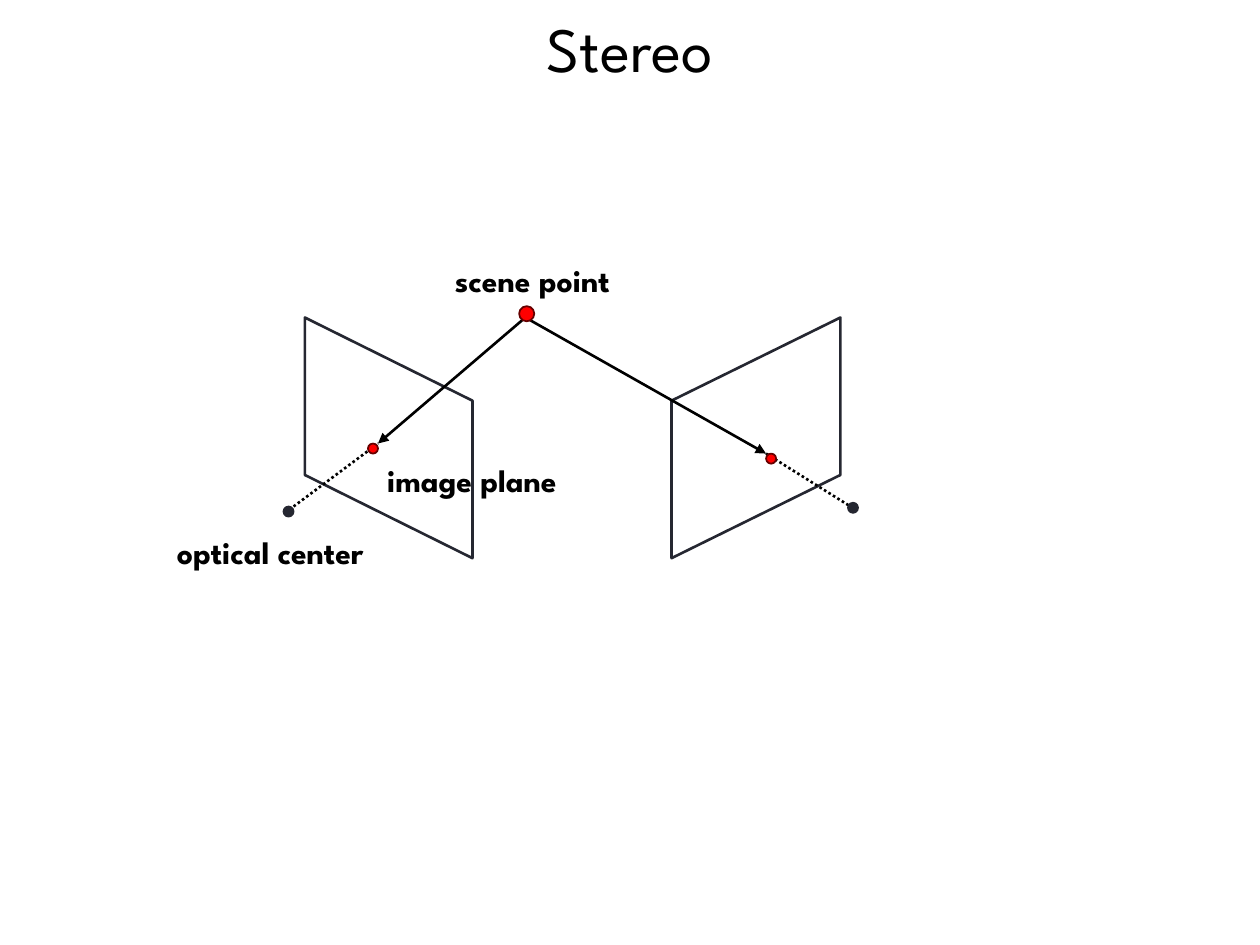
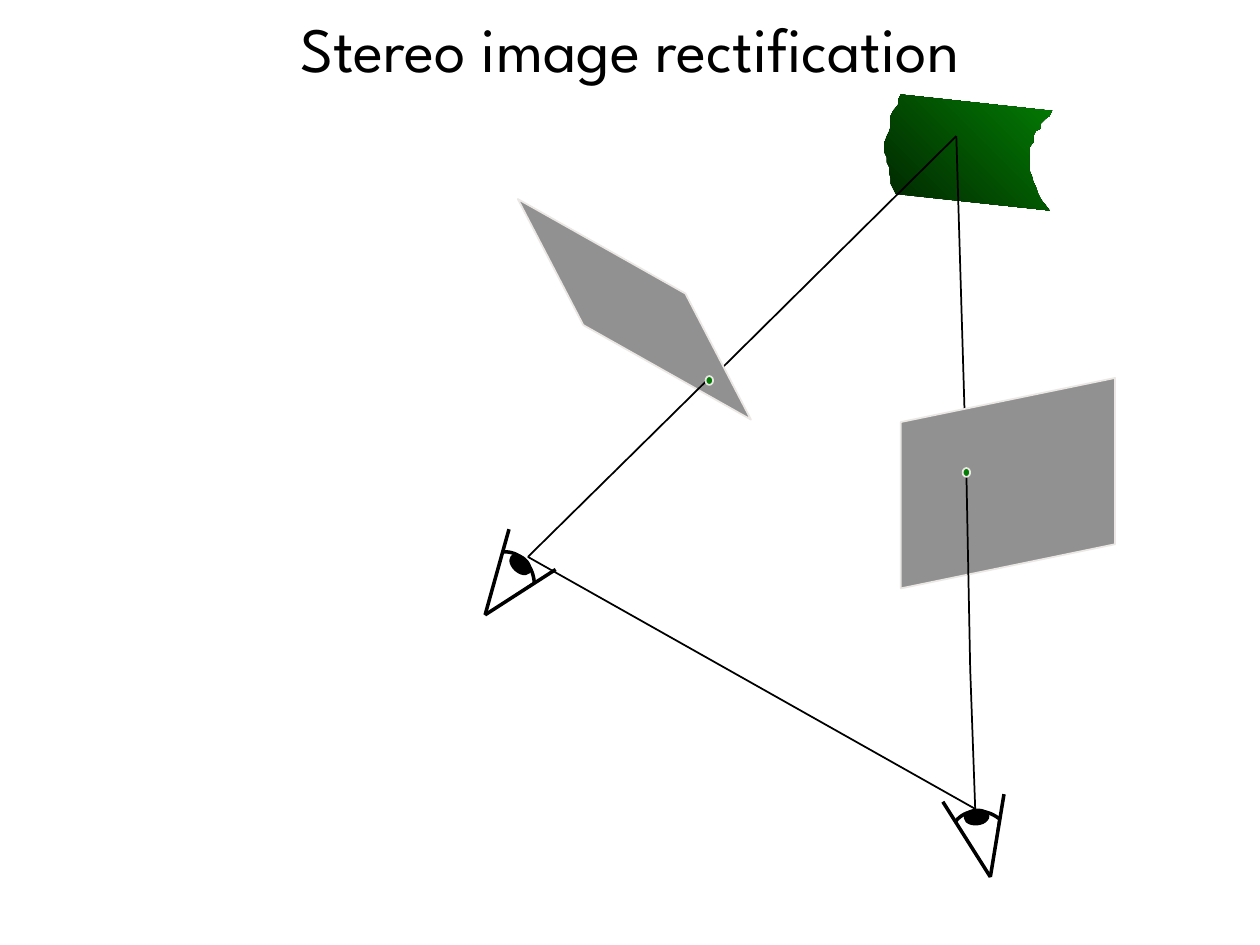
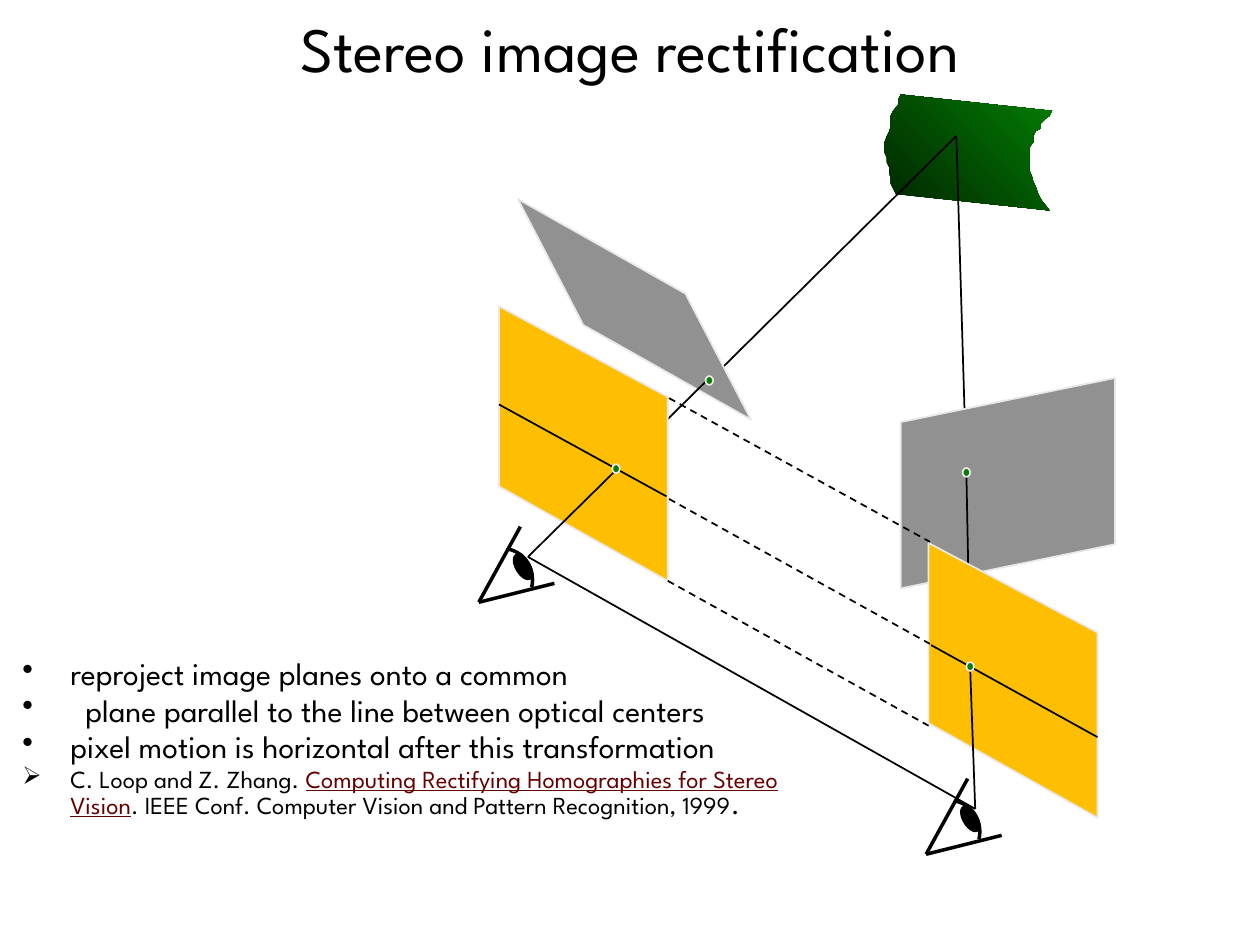
from math import cos, radians, sin

from pptx import Presentation
from pptx.dml.color import RGBColor
from pptx.enum.dml import MSO_LINE
from pptx.enum.shapes import MSO_CONNECTOR, MSO_SHAPE
from pptx.enum.text import MSO_ANCHOR, PP_ALIGN
from pptx.oxml.ns import qn
from pptx.util import Inches, Pt

FONT = "League Spartan"
BLACK, INK, RED, MAROON = "000000", "252731", "FF0000", "660000"
GREY, EDGE, GREEN, DARK_GREEN, YELLOW = "919191", "EAE7E4", "037C03", "012501", "FEBF02"
STRAIGHT, OVAL = MSO_CONNECTOR.STRAIGHT, MSO_SHAPE.OVAL
DOTTED, DASHED = MSO_LINE.ROUND_DOT, MSO_LINE.DASH
CENTER, MIDDLE = PP_ALIGN.CENTER, MSO_ANCHOR.MIDDLE

# Stereo pair: image planes, optical centers and projections
SCENE_POINT = (4.18, 2.49)
VIEWS = [
    {"outer": 2.42, "inner": 3.75, "center": (2.29, 4.06), "image": (2.96, 3.56),
     "ray": ((4.17, 2.52), (3, 3.52)), "behind": ((2.33, 4.02), (3, 3.52))},
    {"outer": 6.67, "inner": 5.33, "center": (6.77, 4.03), "image": (6.12, 3.64),
     "ray": ((4.17, 2.52), (6.08, 3.6)), "behind": ((6.08, 3.6), (6.75, 4.02))},
]
LABELS = [
    ("scene point", 3.43, 2.02, 1.59),
    ("optical center", 1.23, 4.18, 1.83),
    ("image plane", 2.92, 3.61, 1.65),
]

# Rectification: scene surface, planes, sight lines and eyes
SURFACE = [
    (7.15, 0.75), (7.13, 0.79), (7.13, 0.83), (7.09, 0.88), (7.07, 0.92), (7.07, 1),
    (7.06, 1.04), (7.04, 1.08), (7.02, 1.13), (7.02, 1.21), (7.04, 1.25), (7.04, 1.29),
    (7.06, 1.33), (7.06, 1.38), (7.07, 1.42), (7.07, 1.46), (7.09, 1.5), (7.11, 1.54),
    (8.33, 1.67), (8.26, 1.58), (8.24, 1.54), (8.22, 1.48), (8.2, 1.44), (8.19, 1.4),
    (8.17, 1.35), (8.17, 1.17), (8.2, 1.13), (8.2, 1.08), (8.22, 1.04), (8.26, 1.02),
    (8.26, 0.98), (8.3, 0.94), (8.33, 0.92), (8.35, 0.88),
]
LEFT_PLANE = [(4.63, 2.58), (5.96, 3.33), (5.44, 2.33), (4.11, 1.58)]
RIGHT_PLANE = [(7.15, 3.35), (7.15, 4.67), (8.85, 4.32), (8.85, 3)]
LEFT_RECTIFIED = [(3.96, 3.86), (5.3, 4.61), (5.3, 3.15), (3.96, 2.43)]
RIGHT_RECTIFIED = [(7.37, 5.74), (8.71, 6.49), (8.71, 5.02), (7.37, 4.31)]
OBJECT, LEFT_EYE, RIGHT_EYE = (7.59, 1.08), (4.19, 4.42), (7.74, 6.42)
LEFT_STOP, RIGHT_STOP, RIGHT_LOW = (4.89, 3.73), (7.67, 3.75), (7.7, 5.31)
IMAGE_DOTS = [(7.67, 3.75), (5.63, 3.02)]
RECTIFIED_DOTS = [(7.7, 5.29), (4.89, 3.72)]
DASHES = [((5.31, 3.16), (7.38, 4.3)), ((5.3, 4.61), (7.37, 5.76)), ((5.31, 3.96), (7.38, 5.11))]
SCANLINES = [((3.96, 3.21), (5.29, 3.94)), ((7.39, 5.12), (8.71, 5.85))]

# Eye parts are measured from the apex; arc holds four Bezier points
TILTED_EYE = {
    "tips": [(0.19, -0.68), (0.56, -0.36)],
    "arc": [(0.14, -0.5), (0.27, -0.51), (0.38, -0.4), (0.39, -0.26)],
    "pupil": (0.28, -0.4), "size": (0.12, 0.19), "rotation": 312.5, "cone": True,
}
PARALLEL_EYE = {
    "tips": [(0.33, -0.6), (0.6, -0.15)],
    "arc": [(0.24, -0.42), (0.37, -0.39), (0.45, -0.26), (0.42, -0.12)],
    "pupil": (0.35, -0.28), "size": (0.11, 0.22), "rotation": 329, "cone": False,
}

# Bullet, hanging indent, space before, runs
BODY = [
    ("•", 0.38, 0, [("reproject image planes onto a common", {"size": 18})]),
    ("•", 0.5, 3.6, [("plane parallel to the line between optical centers", {"size": 18})]),
    ("•", 0.38, 3.6, [("pixel motion is horizontal after this transformation", {"size": 18})]),
    ("➢", 0.38, 2.8, [
        ("C. Loop and Z. Zhang. ", {"size": 14}),
        ("Computing Rectifying Homographies for Stereo Vision",
         {"size": 14, "color": MAROON, "underline": True}),
        (". IEEE Conf. Computer Vision and Pattern Recognition, 1999", {"size": 14}),
        (".", {"size": 16}),
    ]),
]


def rgb(value):
    return RGBColor.from_string(value)


def add_run(p, text, size, color=BLACK, **style):
    r = p.add_run()
    r.text = text
    r.font.color.rgb = rgb(color)
    for name, value in {"name": FONT, "size": Pt(size), **style}.items():
        setattr(r.font, name, value)


def add_slide(title):
    s = prs.slides.add_slide(prs.slide_layouts[5])
    sp = s.shapes.title
    sp.left, sp.top, sp.width, sp.height = 0, 0, Inches(10), Inches(0.75)
    tf = sp.text_frame
    tf.vertical_anchor = MIDDLE
    p = tf.paragraphs[0]
    p.alignment = CENTER
    add_run(p, title, 36)
    return s


def paint(sp, fill, line, width):
    sp.shadow.inherit = False
    if fill:
        sp.fill.solid()
        sp.fill.fore_color.rgb = rgb(fill)
    else:
        sp.fill.background()
    if line:
        sp.line.color.rgb = rgb(line)
        sp.line.width = Pt(width)
    else:
        sp.line.fill.background()


def add_outline(s, points, fill=None, line=EDGE, width=1, close=True):
    start, *rest = [(Inches(x), Inches(y)) for x, y in points]
    builder = s.shapes.build_freeform(*start)
    builder.add_line_segments(rest, close=close)
    sp = builder.convert_to_shape()
    paint(sp, fill, line, width)
    return sp


def add_dot(s, center, size, fill, line, rotation=0):
    (x, y), (w, h) = center, size
    sp = s.shapes.add_shape(OVAL, Inches(x - w / 2), Inches(y - h / 2), Inches(w), Inches(h))
    sp.rotation = rotation
    paint(sp, fill, line, 1)


def add_line(s, start, end, width=1, dash=None, arrow=False):
    c = s.shapes.add_connector(STRAIGHT, *(Inches(v) for v in (*start, *end)))
    c.line.color.rgb = rgb(BLACK)
    c.line.width = Pt(width)
    if dash:
        c.line.dash_style = dash
    if arrow:
        ln = c.line._get_or_add_ln()
        ln.append(ln.makeelement(qn("a:tailEnd"), {"type": "triangle"}))
    props = c._element.spPr
    props.append(props.makeelement(qn("a:effectLst"), {}))


def bezier(points, steps=16):
    for i in range(steps + 1):
        t = i / steps
        weights = ((1 - t) ** 3, 3 * t * (1 - t) ** 2, 3 * t * t * (1 - t), t ** 3)
        yield tuple(sum(w * pt[axis] for w, pt in zip(weights, points)) for axis in (0, 1))


def add_eye(s, eye, apex, turn=0):
    c, n = cos(radians(turn)), sin(radians(turn))

    def place(point):
        x, y = point
        return apex[0] + x * c - y * n, apex[1] + x * n + y * c

    arc = list(bezier([place(pt) for pt in eye["arc"]]))
    if eye["cone"]:
        add_outline(s, [apex, *arc], line=BLACK, width=0.75)
    add_outline(s, arc, line=BLACK, width=2, close=False)
    for tip in eye["tips"]:
        add_line(s, apex, place(tip), 2)
    add_dot(s, place(eye["pupil"]), eye["size"], BLACK, BLACK, eye["rotation"] + turn)


def add_green_dots(s, centers):
    for center in centers:
        add_dot(s, center, (0.06, 0.07), GREEN, EDGE)


def add_surface(s):
    sp = add_outline(s, SURFACE, line=None)
    sp.fill.gradient()
    sp.fill.gradient_angle = 45
    for stop, color in zip(sp.fill.gradient_stops, (DARK_GREEN, GREEN)):
        stop.color.rgb = rgb(color)


def add_scene(s, rectified=False):
    add_surface(s)
    add_line(s, LEFT_EYE, RIGHT_EYE)
    add_line(s, IMAGE_DOTS[1], OBJECT)
    add_outline(s, LEFT_PLANE, GREY)
    add_line(s, RIGHT_STOP, OBJECT)
    add_line(s, LEFT_STOP, (5.63, 3))
    if rectified:
        add_outline(s, LEFT_RECTIFIED, YELLOW)
    add_outline(s, RIGHT_PLANE, GREY)
    add_line(s, RIGHT_LOW, RIGHT_STOP)
    if rectified:
        add_outline(s, RIGHT_RECTIFIED, YELLOW)
    add_line(s, LEFT_EYE, LEFT_STOP)
    add_line(s, RIGHT_EYE, RIGHT_LOW)
    add_green_dots(s, IMAGE_DOTS)


def add_body(s):
    tf = s.shapes.add_textbox(Inches(0.08), Inches(5.2), Inches(6.5), Inches(2.19)).text_frame
    tf.word_wrap = True
    for i, (bullet, indent, before, runs) in enumerate(BODY):
        p = tf.add_paragraph() if i else tf.paragraphs[0]
        p.line_spacing, p.space_before = 0.8, Pt(before)
        props = p._p.get_or_add_pPr()
        props.set("marL", str(Inches(indent)))
        props.set("indent", str(-Inches(indent)))
        props.append(props.makeelement(qn("a:buChar"), {"char": bullet}))
        for text, style in runs:
            add_run(p, text, **style)


def stereo_slide():
    s = add_slide("Stereo")
    for v in VIEWS:
        outer, inner = v["outer"], v["inner"]
        add_outline(s, [(outer, 2.52), (outer, 3.77), (inner, 4.43), (inner, 3.18)],
                    line=INK, width=1.5)
    for v in VIEWS:
        add_line(s, *v["behind"], width=1.5, dash=DOTTED)
        add_line(s, *v["ray"], width=1.5, arrow=True)
        add_dot(s, v["center"], (0.08, 0.08), INK, INK)
        add_dot(s, v["image"], (0.08, 0.08), RED, MAROON)
    add_dot(s, SCENE_POINT, (0.12, 0.12), RED, MAROON)
    for text, x, y, w in LABELS:
        tf = s.shapes.add_textbox(Inches(x), Inches(y), Inches(w), Inches(0.4)).text_frame
        tf.word_wrap = False
        tf.vertical_anchor = MIDDLE
        p = tf.paragraphs[0]
        p.alignment = CENTER
        add_run(p, text, 18, bold=True)


def unrectified_slide():
    s = add_slide("Stereo image rectification")
    add_scene(s)
    add_eye(s, TILTED_EYE, (7.86, 6.96), turn=-47.9)
    add_eye(s, TILTED_EYE, (3.85, 4.88))


def rectified_slide():
    s = add_slide("Stereo image rectification")
    add_scene(s, rectified=True)
    for apex in [(3.8, 4.78), (7.35, 6.78)]:
        add_eye(s, PARALLEL_EYE, apex)
    add_body(s)
    for ends in DASHES:
        add_line(s, *ends, dash=DASHED)
    for ends in SCANLINES:
        add_line(s, *ends)
    add_green_dots(s, RECTIFIED_DOTS)


prs = Presentation()
prs.slide_width, prs.slide_height = Inches(10), Inches(7.5)
stereo_slide()
unrectified_slide()
rectified_slide()
prs.save("out.pptx")
